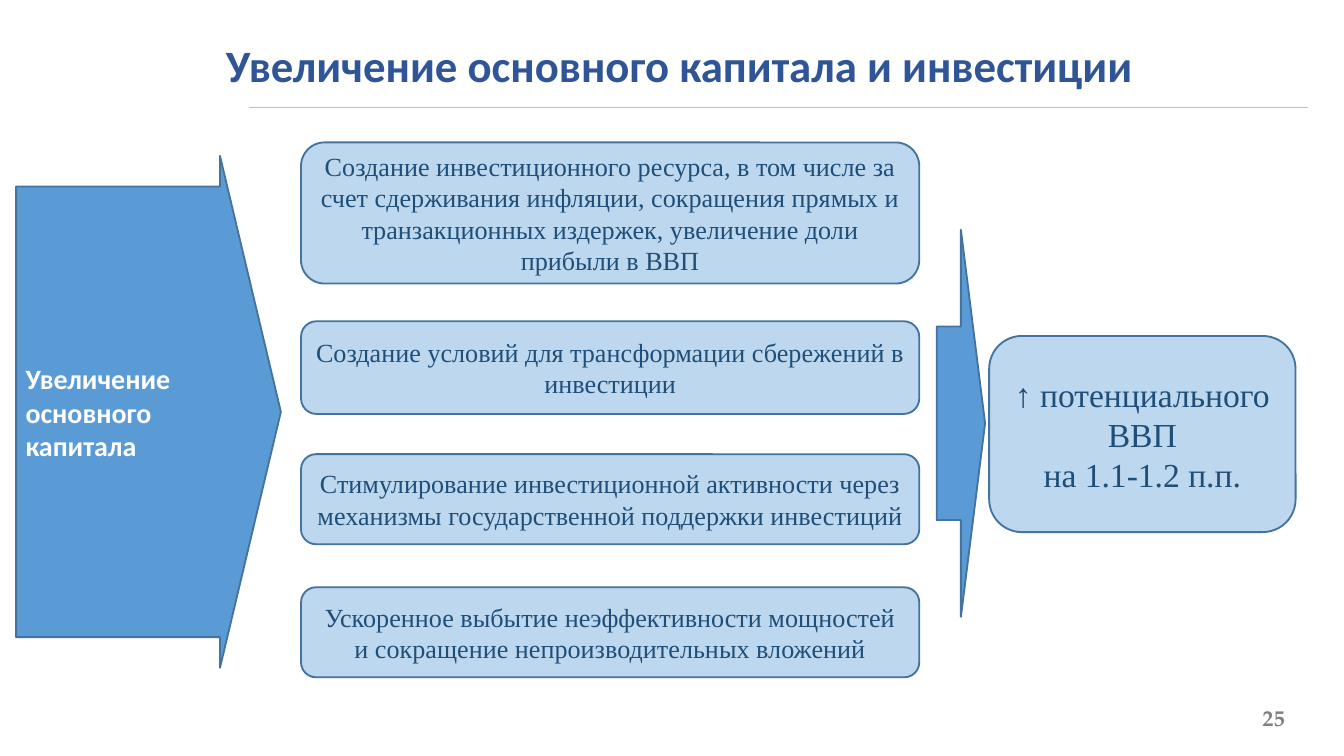
from pptx import Presentation
from pptx.dml.color import RGBColor
from pptx.enum.shapes import MSO_CONNECTOR, MSO_SHAPE
from pptx.enum.text import MSO_ANCHOR, PP_ALIGN
from pptx.oxml.ns import qn
from pptx.util import Inches, Pt
from lxml import etree

ROUND, ARROW = MSO_SHAPE.ROUNDED_RECTANGLE, MSO_SHAPE.RIGHT_ARROW
LEFT, MID, RIGHT = PP_ALIGN.LEFT, PP_ALIGN.CENTER, PP_ALIGN.RIGHT
MIDDLE = MSO_ANCHOR.MIDDLE

# Content
TITLE = "Увеличение основного капитала и инвестиции"
CAUSE = "Увеличение основного капитала"
STEPS = [  # text, top, height
    ("Создание инвестиционного ресурса, в том числе за счет сдерживания "
     "инфляции, сокращения прямых и транзакционных издержек, увеличение "
     "доли прибыли в ВВП", 1.06, 1.05),
    ("Создание условий для трансформации сбережений в инвестиции", 2.39, 0.69),
    ("Стимулирование инвестиционной активности через механизмы "
     "государственной поддержки инвестиций", 3.38, 0.67),
    ("Ускоренное выбытие неэффективности мощностей и сокращение "
     "непроизводительных вложений", 4.37, 0.67),
]
RESULT = ["↑ потенциального ВВП", "на 1.1-1.2 п.п."]
PAGE = "25"

# Formats
COLORS = {"title": "2F5597", "rule": "BFBFBF", "page": "7F7F7F", "arrow": "5B9BD5",
          "edge": "43739E", "box": "BDD7EE", "ink": "1F4E79", "white": "FFFFFF"}
FONTS = {
    "title": {"name": "Calibri", "size": Pt(24), "bold": True},
    "cause": {"name": "Calibri", "size": Pt(15), "bold": True},
    "step": {"name": "Times New Roman", "size": Pt(14), "bold": False},
    "result": {"name": "Times New Roman", "size": Pt(18), "bold": False},
    "page": {"name": "TeX Gyre Pagella", "size": Pt(12), "bold": True},
}
PADS = {"margin_left": Inches(0.07), "margin_right": Inches(0.07),
        "margin_top": Inches(0.04), "margin_bottom": Inches(0.04),
        "vertical_anchor": MIDDLE, "word_wrap": True}
BARE = {"margin_left": 0, "margin_right": 0, "margin_top": 0, "margin_bottom": 0,
        "vertical_anchor": MIDDLE, "word_wrap": False}


def color(key):
    return RGBColor.from_string(COLORS[key])


def apply(item, values):
    for key, value in values.items():
        setattr(item, key, value)


def write(shape, lines, font, ink, align, frame):
    apply(shape.text_frame, frame)
    shape.text_frame.text = "\n".join(lines)
    for para in shape.text_frame.paragraphs:
        para.alignment = align
        apply(para.font, FONTS[font])
        para.font.color.rgb = color(ink)


def draw(slide, kind, place, fill):
    shape = slide.shapes.add_shape(kind, *map(Inches, place))
    shape.shadow.inherit = False
    shape.fill.solid()
    shape.fill.fore_color.rgb = color(fill)
    shape.line.color.rgb = color("edge")
    shape.line.width = Pt(1)
    return shape


def label(slide, place, text, font, align, frame):
    box = slide.shapes.add_textbox(*map(Inches, place))
    write(box, [text], font, font, align, frame)


def main():
    # Widescreen slide, 16 to 9
    deck = Presentation()
    deck.slide_width = Inches(10)
    deck.slide_height = Inches(10) * 9 // 16
    slide = deck.slides.add_slide(deck.slide_layouts[6])

    # Title, rule and page number
    rule = slide.shapes.add_connector(
        MSO_CONNECTOR.STRAIGHT, *map(Inches, (1.85, 0.8, 9.73, 0.8)))
    rule.line.color.rgb = color("rule")
    rule.line.width = Pt(1)
    etree.SubElement(rule._element.spPr, qn("a:effectLst"))
    label(slide, (1.57, 0.23, 6.97, 0.5), TITLE, "title", MID, {"word_wrap": True})
    label(slide, (9.08, 5.29, 0.48, 0.1), PAGE, "page", RIGHT, BARE)

    # Cause arrow
    cause = draw(slide, ARROW, (0.12, 1.16, 1.97, 3.81), "arrow")
    cause.adjustments[0], cause.adjustments[1] = 0.88, 0.23
    write(cause, [CAUSE], "cause", "white", LEFT, PADS)

    # Steps
    for text, top, height in STEPS:
        step = draw(slide, ROUND, (2.24, top, 4.6, height), "box")
        write(step, [text], "step", "ink", MID, PADS)

    # Result
    draw(slide, ARROW, (6.97, 1.71, 0.36, 2.88), "arrow")
    goal = draw(slide, ROUND, (7.36, 2.5, 2.28, 1.46), "box")
    write(goal, RESULT, "result", "ink", MID, PADS)

    deck.save("out.pptx")


if __name__ == "__main__":
    main()
